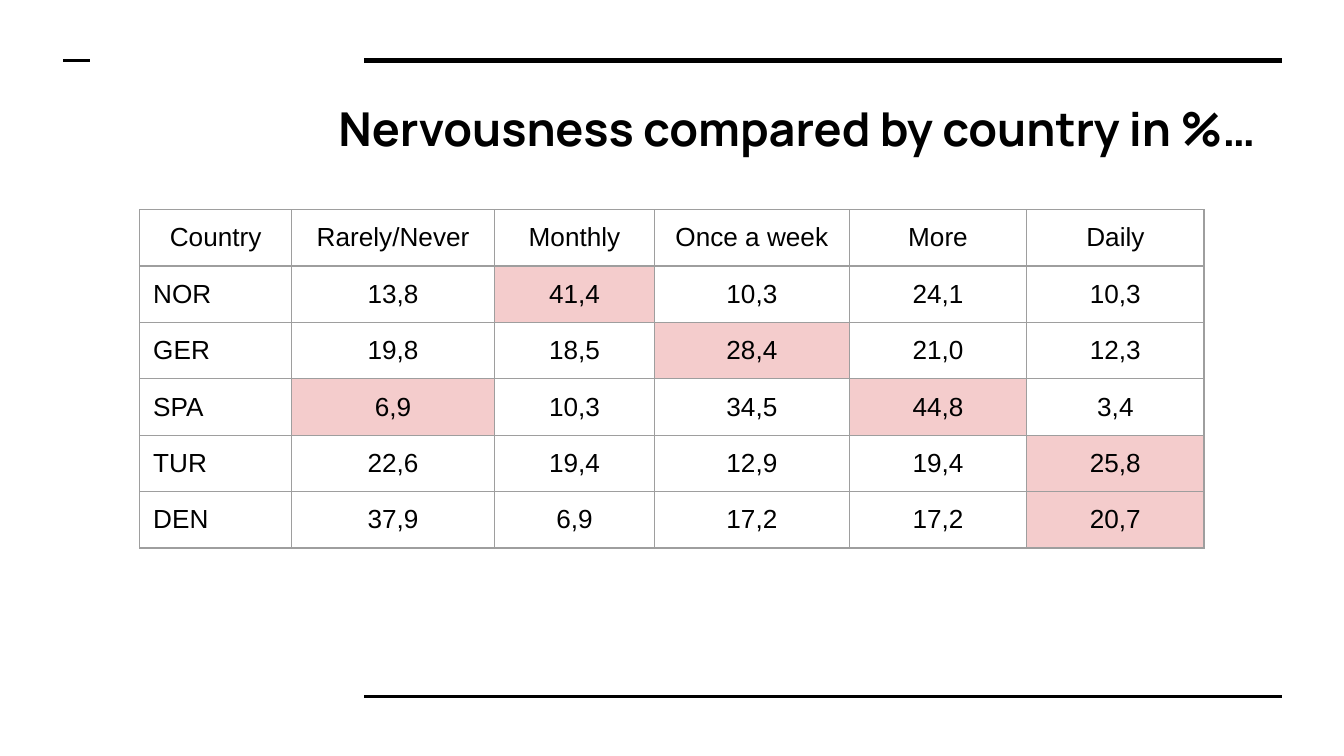
from lxml.etree import SubElement
from pptx import Presentation
from pptx.dml.color import RGBColor
from pptx.enum.shapes import MSO_CONNECTOR
from pptx.enum.text import MSO_ANCHOR, PP_ALIGN
from pptx.oxml.ns import qn
from pptx.util import Inches, Pt

COLORS = {"ink": "000000", "paper": "FFFFFF", "grid": "9E9E9E", "highlight": "F4CCCC"}
TITLE_MARGINS = dict.fromkeys(
    ("margin_left", "margin_top", "margin_right", "margin_bottom"), Inches(0.1)
)
# A tighter bottom margin keeps the rows at their set height
CELL_MARGINS = {**TITLE_MARGINS, "margin_bottom": Inches(0.08)}


def write(para, text, font_format):
    span = para.add_run()
    span.text = text
    for name, value in font_format.items():
        setattr(span.font, name, value)
    span.font.color.rgb = RGBColor.from_string(COLORS["ink"])


def add_borders(cell):
    properties = cell._tc.get_or_add_tcPr()
    for side in ("lnL", "lnR", "lnT", "lnB"):
        border = SubElement(properties, qn(f"a:{side}"), w=str(Pt(0.75)))
        fill = SubElement(border, qn("a:solidFill"))
        SubElement(fill, qn("a:srgbClr"), val=COLORS["grid"])


deck = Presentation()
deck.slide_width = Inches(10)
deck.slide_height = deck.slide_width * 9 // 16
page = deck.slides.add_slide(deck.slide_layouts[6])

# Horizontal rules: left, right, height on the page, weight
for left, right, top, weight in [
    (2.71, 9.54, 0.45, 3),
    (2.71, 9.54, 5.18, 1.5),
    (0.47, 0.67, 0.45, 1.5),
]:
    rule = page.shapes.add_connector(
        MSO_CONNECTOR.STRAIGHT, Inches(left), Inches(top), Inches(right), Inches(top)
    )
    rule.line.color.rgb = RGBColor.from_string(COLORS["ink"])
    rule.line.width = Pt(weight)
    SubElement(rule._element.spPr, qn("a:effectLst"))

# Title
title_box = page.shapes.add_textbox(Inches(2.42), Inches(0.64), Inches(7.16), Inches(0.69))
title_frame = title_box.text_frame
title_frame.word_wrap = True
title_frame.vertical_anchor = MSO_ANCHOR.TOP
for name, value in TITLE_MARGINS.items():
    setattr(title_frame, name, value)
write(
    title_frame.paragraphs[0],
    "Nervousness compared by country in %…",
    {"name": "Manrope", "size": Pt(25), "bold": True},
)

# Table of answers by country
answers = [
    ["Country", "Rarely/Never", "Monthly", "Once a week", "More", "Daily"],
    ["NOR", "13,8", "41,4", "10,3", "24,1", "10,3"],
    ["GER", "19,8", "18,5", "28,4", "21,0", "12,3"],
    ["SPA", "6,9", "10,3", "34,5", "44,8", "3,4"],
    ["TUR", "22,6", "19,4", "12,9", "19,4", "25,8"],
    ["DEN", "37,9", "6,9", "17,2", "17,2", "20,7"],
]
highlighted = {(1, 2), (2, 3), (3, 1), (3, 4), (4, 5), (5, 5)}
column_widths = [1.13, 1.51, 1.19, 1.45, 1.32, 1.32]
row_height = 0.42

table = page.shapes.add_table(
    len(answers), len(column_widths), Inches(1.04), Inches(1.56),
    Inches(sum(column_widths)), Inches(row_height * len(answers)),
).table
table.horz_banding = False
table.first_row = False
for column, width in zip(table.columns, column_widths):
    column.width = Inches(width)

for row_index, row in enumerate(answers):
    table.rows[row_index].height = Inches(row_height)
    for column_index, text in enumerate(row):
        cell = table.cell(row_index, column_index)
        for name, value in CELL_MARGINS.items():
            setattr(cell, name, value)
        add_borders(cell)
        color = "highlight" if (row_index, column_index) in highlighted else "paper"
        cell.fill.solid()
        cell.fill.fore_color.rgb = RGBColor.from_string(COLORS[color])
        para = cell.text_frame.paragraphs[0]
        is_country = row_index > 0 and column_index == 0
        para.alignment = PP_ALIGN.LEFT if is_country else PP_ALIGN.CENTER
        write(para, text, {"name": "Arial", "size": Pt(14)})

deck.save("out.pptx")
